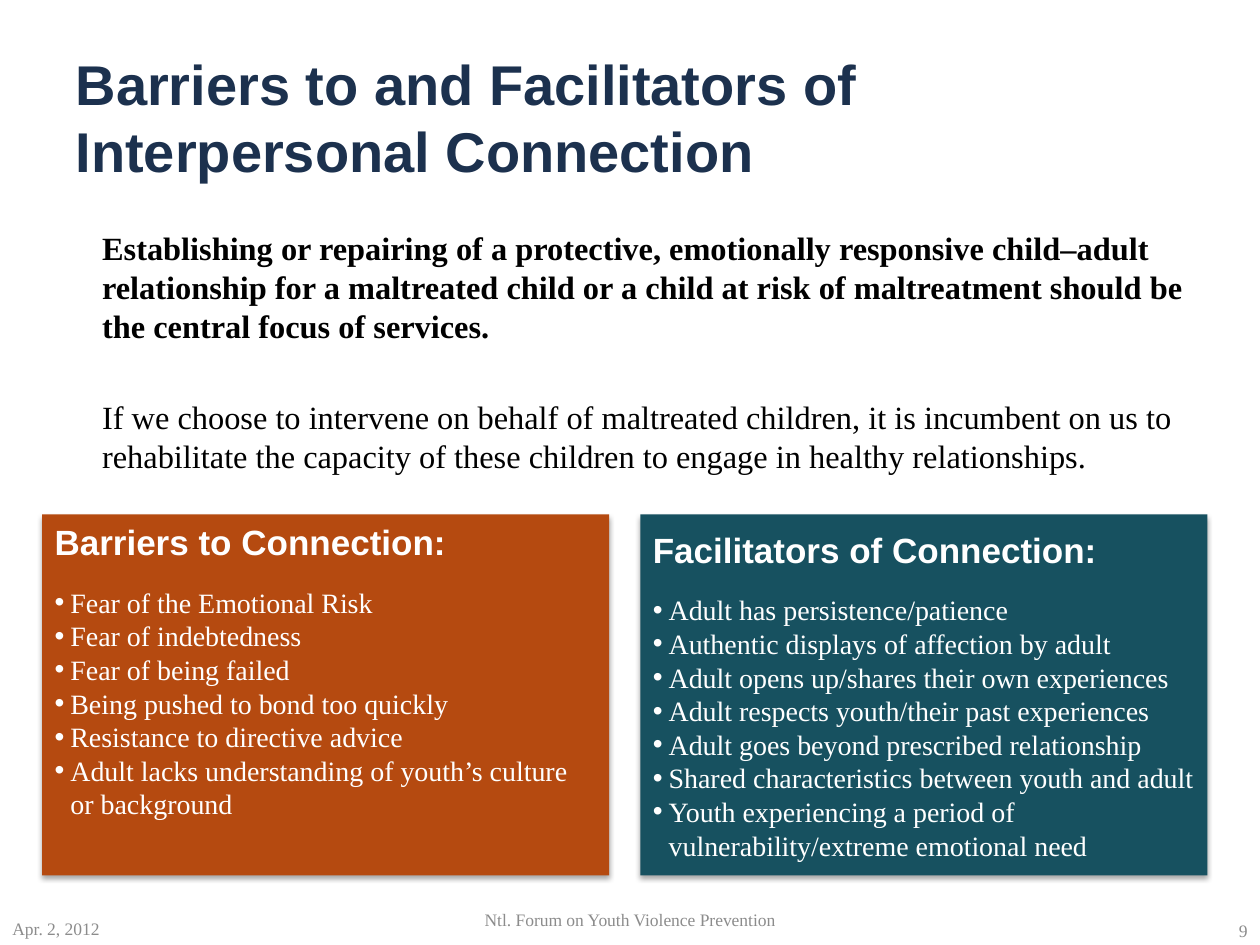
from lxml import etree
from pptx import Presentation
from pptx.dml.color import RGBColor
from pptx.enum.shapes import MSO_SHAPE
from pptx.enum.text import MSO_ANCHOR, MSO_AUTO_SIZE, PP_ALIGN
from pptx.oxml import parse_xml
from pptx.oxml.ns import nsdecls, qn
from pptx.util import Cm, Pt

RECTANGLE = MSO_SHAPE.RECTANGLE
TOP, MIDDLE = MSO_ANCHOR.TOP, MSO_ANCHOR.MIDDLE
LEFT, CENTER, RIGHT = PP_ALIGN.LEFT, PP_ALIGN.CENTER, PP_ALIGN.RIGHT
NO_AUTOFIT = MSO_AUTO_SIZE.NONE

SANS, SERIF = "Arial", "Times New Roman"
NAVY, ORANGE, TEAL = "1C314E", "B54A10", "175160"
BLACK, WHITE, GRAY = "000000", "FFFFFF", "8C8C8C"

STATEMENTS = [
    ("Establishing or repairing of a protective, emotionally responsive "
     "child–adult relationship for a maltreated child or a child at risk of "
     "maltreatment should be the central focus of services.", True),
    ("If we choose to intervene on behalf of maltreated children, it is "
     "incumbent on us to rehabilitate the capacity of these children to "
     "engage in healthy relationships.", False),
]
PANELS = [
    ("Barriers to Connection:", ORANGE, TOP, [
        "Fear of the Emotional Risk",
        "Fear of indebtedness",
        "Fear of being failed",
        "Being pushed to bond too quickly",
        "Resistance to directive advice",
        "Adult lacks understanding of youth’s culture or background",
    ]),
    ("Facilitators of Connection:", TEAL, MIDDLE, [
        "Adult has persistence/patience",
        "Authentic displays of affection by adult",
        "Adult opens up/shares their own experiences",
        "Adult respects youth/their past experiences",
        "Adult goes beyond prescribed relationship",
        "Shared characteristics between youth and adult",
        "Youth experiencing a period of vulnerability/extreme emotional need",
    ]),
]
FOOTERS = [
    ("Apr. 2, 2012", 0, 18.21, 5.92, LEFT),
    ("Ntl. Forum on Youth Violence Prevention", 8.68, 18.03, 8.04, CENTER),
    ("9", 19.48, 18.24, 5.92, RIGHT),
]


def color(hex_value):
    return RGBColor.from_string(hex_value)


def add_span(para, text, font, size, hex_value, bold=False):
    span = para.add_run()
    span.text = text
    span.font.name = font
    span.font.size = Pt(size)
    span.font.bold = bold
    span.font.color.rgb = color(hex_value)


def next_para(frame):
    """Return the first paragraph while it is empty, then new ones."""
    first = frame.paragraphs[0]
    return frame.add_paragraph() if first.runs else first


def set_bullet(para, indent):
    properties = para._p.get_or_add_pPr()
    properties.set("marL", str(indent))
    properties.set("indent", str(-indent))
    etree.SubElement(properties, qn("a:buFont"), typeface=SANS)
    etree.SubElement(properties, qn("a:buChar"), char="•")


def add_shadow(shape):
    shape._element.spPr.append(parse_xml(
        f'<a:effectLst {nsdecls("a")}>'
        f'<a:outerShdw blurRad="{Pt(3.1)}" dist="{Pt(1.8)}" dir="5400000" '
        'rotWithShape="0"><a:srgbClr val="000000"><a:alpha val="35000"/>'
        '</a:srgbClr></a:outerShdw></a:effectLst>'))


def add_text_box(page, left, top, width, height, anchor):
    box = page.shapes.add_textbox(Cm(left), Cm(top), Cm(width), Cm(height))
    box.text_frame.word_wrap = True
    box.text_frame.vertical_anchor = anchor
    return box.text_frame


def set_title(page, text):
    title = page.shapes.title
    title.left, title.top = Cm(1.27), Cm(0.76)
    title.width, title.height = Cm(22.86), Cm(3.18)
    frame = title.text_frame
    frame.auto_size = NO_AUTOFIT
    frame.vertical_anchor = MIDDLE
    para = frame.paragraphs[0]
    para.alignment = LEFT
    add_span(para, text, SANS, 32, NAVY, bold=True)


def add_statements(page):
    frame = add_text_box(page, 0.85, 3.6, 23.28, 5.92, TOP)
    frame.margin_left = Cm(1.21)
    frame.margin_top = Cm(1)
    for text, bold in STATEMENTS:
        para = next_para(frame)
        para.space_after = Pt(29.7)
        add_span(para, text, SERIF, 18.5, BLACK, bold)


def add_panel(page, left, heading, fill, anchor, items):
    panel = page.shapes.add_shape(
        RECTANGLE, Cm(left), Cm(10.37), Cm(11.43), Cm(7.28))
    panel.fill.solid()
    panel.fill.fore_color.rgb = color(fill)
    panel.line.fill.background()
    add_shadow(panel)
    frame = panel.text_frame
    frame.word_wrap = True
    frame.vertical_anchor = anchor
    para = next_para(frame)
    para.alignment = LEFT
    para.space_after = Pt(13)
    add_span(para, heading, SANS, 20, WHITE, bold=True)
    for item in items:
        para = next_para(frame)
        para.alignment = LEFT
        set_bullet(para, Cm(0.32))
        add_span(para, item, SERIF, 16, WHITE)


def add_footer(page, text, left, top, width, alignment):
    frame = add_text_box(page, left, top, width, 1.02, MIDDLE)
    para = frame.paragraphs[0]
    para.alignment = alignment
    add_span(para, text, SERIF, 10, GRAY)


def main():
    deck = Presentation()
    deck.slide_width, deck.slide_height = Cm(25.4), Cm(19.05)
    page = deck.slides.add_slide(deck.slide_layouts.get_by_name("Title Only"))
    set_title(page, "Barriers to and Facilitators of Interpersonal Connection")
    add_statements(page)
    for index, panel in enumerate(PANELS):
        add_panel(page, 0.85 + index * 12.06, *panel)
    for footer in FOOTERS:
        add_footer(page, *footer)
    deck.save("out.pptx")


if __name__ == "__main__":
    main()
